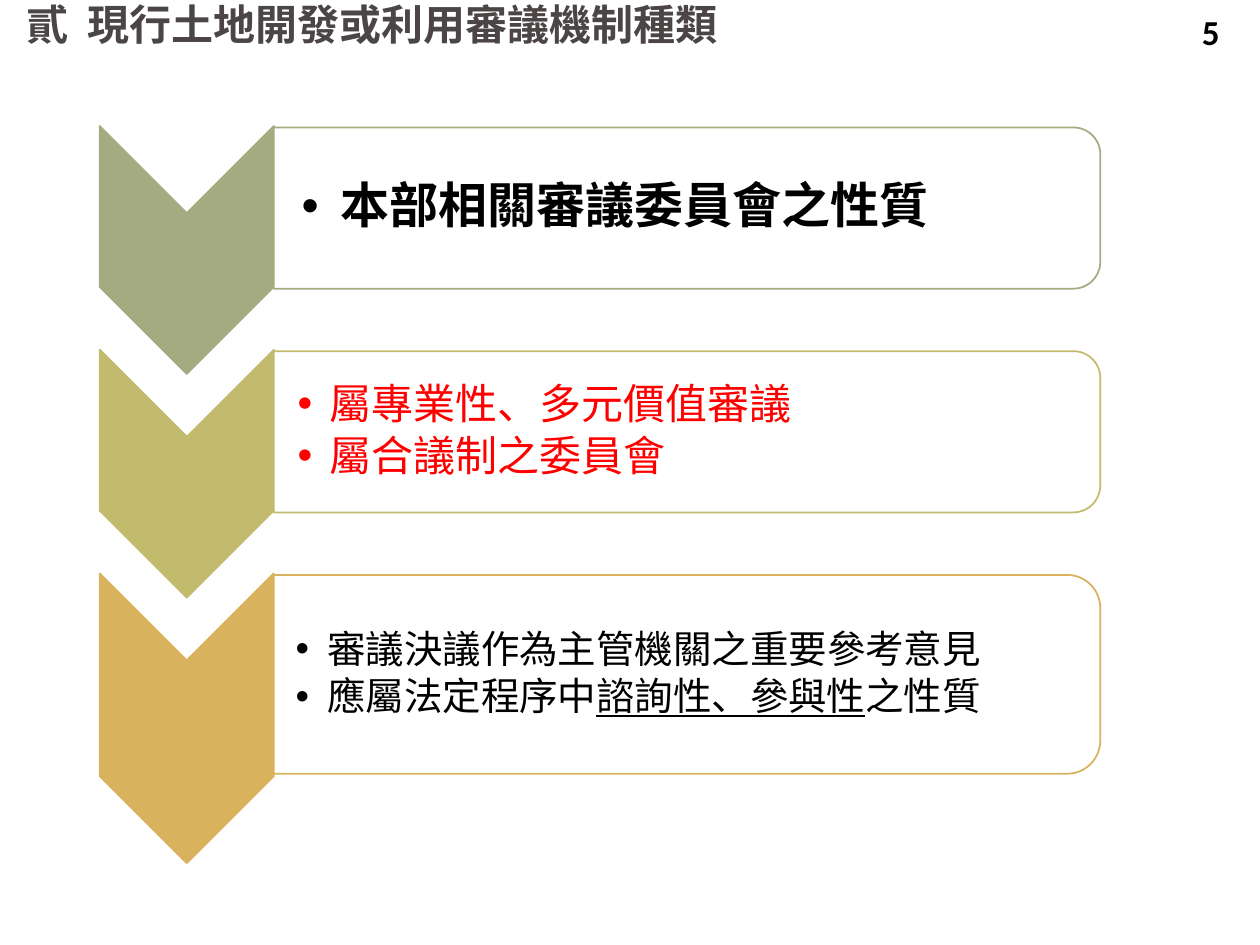
"""Build the slide on the nature of the review committees."""
from dataclasses import dataclass

from lxml import etree
from pptx import Presentation
from pptx import util as u
from pptx.dml import color
from pptx.enum import shapes, text
from pptx.oxml import ns

CJK = "Noto Sans CJK SC"
LEFT, TOP, STEP = 2.01, 2.54, 4.51
BAR, WIDE = 3.51, 16.66
INK = "4C4545"


@dataclass
class Run:
    words: str
    under: bool = False


@dataclass
class Band:
    hue: str
    tall: float
    box: float
    size: int
    ink: str
    hang: float
    rows: list[list[Run]]
    bold: bool = False


BANDS = [
    Band("A5AB81", 5, 3.25, 28, "000000", 0.79,
         [[Run("本部相關審議委員會之性質")]], True),
    Band("C2BB6E", 5, 3.25, 24, "FF0000", 0.64,
         [[Run("屬專業性、多元價值審議")], [Run("屬合議制之委員會")]]),
    Band("D8B25C", 5.84, 4.01, 22, "000000", 0.64,
         [[Run("審議決議作為主管機關之重要參考意見")],
          [Run("應屬法定程序中"), Run("諮詢性、參與性", True), Run("之性質")]]),
]


def rgb(code: str) -> color.RGBColor:
    """Turn a hex string into a colour."""
    return color.RGBColor.from_string(code)


def place(shape, left: float, top: float, width: float, height: float) -> None:
    """Move and size a shape in centimetres."""
    shape.left, shape.top = u.Cm(left), u.Cm(top)
    shape.width, shape.height = u.Cm(width), u.Cm(height)


def frame(shape, inset: float = 0.25, rim: float = 0.13):
    """Set up a middle-anchored text frame and return it."""
    tf = shape.text_frame
    tf.word_wrap = True
    tf.auto_size = text.MSO_AUTO_SIZE.NONE
    tf.vertical_anchor = text.MSO_ANCHOR.MIDDLE
    tf.margin_left = u.Cm(inset)
    tf.margin_right = u.Cm(min(inset, rim))
    tf.margin_top = tf.margin_bottom = u.Cm(rim)
    return tf


def write(para, run: Run, size: int, ink: str, bold: bool, face: str = CJK) -> None:
    """Add one formatted run to a paragraph."""
    part = para.add_run()
    part.text = run.words
    font = part.font
    font.size, font.bold, font.name = u.Pt(size), bold, face
    font.color.rgb = rgb(ink)
    if run.under:
        font.underline = True
    etree.SubElement(part._r.get_or_add_rPr(), ns.qn("a:ea"), typeface=face)


def label(shape, words: str, size: int, ink: str, align, face: str = CJK,
          space: float = 0.9) -> None:
    """Write a bold single line into a shape."""
    para = frame(shape).paragraphs[0]
    para.alignment, para.line_spacing = align, space
    write(para, Run(words), size, ink, True, face)


def turn(slide, kind, left: float, top: float, width: float, height: float,
         fill: str, line: str):
    """Draw a shape turned a quarter so that it covers the given area."""
    shape = slide.shapes.add_shape(kind, 0, 0, 0, 0)
    place(shape, left + (width - height) / 2, top + (height - width) / 2,
          height, width)
    shape.rotation = 90
    shape.shadow.inherit = False
    shape.fill.solid()
    shape.fill.fore_color.rgb = rgb(fill)
    shape.line.color.rgb = rgb(line)
    shape.line.width = u.Pt(1)
    return shape


def fill_list(body, band: Band, top: float) -> None:
    """Put the bullets of a band into a body placeholder above its panel."""
    high = band.box * 0.91
    place(body, LEFT + BAR, top + (band.box - high) / 2, 16.5, high)
    body.element.getparent().append(body.element)
    tf = frame(body, band.size * 0.02, 0.05)
    for i, row in enumerate(band.rows):
        para = tf.add_paragraph() if i else tf.paragraphs[0]
        para.level = 1
        props = para._p.get_or_add_pPr()
        props.set("marL", str(u.Cm(band.hang)))
        props.set("indent", str(-u.Cm(band.hang)))
        etree.SubElement(props, ns.qn("a:buChar"), char="•")
        para.alignment = text.PP_ALIGN.LEFT
        para.line_spacing, para.space_before = 0.9, u.Pt(0)
        para.space_after = u.Pt(round(band.size * 0.15, 1))
        for run in row:
            write(para, run, band.size, band.ink, band.bold)


def draw(slide, band: Band, body, top: float) -> None:
    """Draw the chevron, panel and list of one band."""
    kind = shapes.MSO_SHAPE
    turn(slide, kind.CHEVRON, LEFT, top, BAR, band.tall, band.hue, band.hue)
    panel = turn(slide, kind.ROUND_2_SAME_RECTANGLE, LEFT + BAR, top + 0.03,
                 WIDE, band.box, "FFFFFF", band.hue)
    tone = panel.fill._xPr.find(".//" + ns.qn("a:srgbClr"))
    etree.SubElement(tone, ns.qn("a:alpha"), val="90000")
    fill_list(body, band, top + 0.03)


def main() -> None:
    """Build and save the slide."""
    deck = Presentation()
    deck.slide_width, deck.slide_height = u.Cm(25.4), u.Cm(19.05)
    slide = deck.slides.add_slide(deck.slide_layouts[4])
    title, *bodies, spare = slide.placeholders
    spare.element.getparent().remove(spare.element)
    align = text.PP_ALIGN
    place(title, 1.52, -0.03, 21.18, 1.14)
    label(title, "現行土地開發或利用審議機制種類", 24, INK, align.LEFT)
    part = slide.shapes.add_textbox(0, 0, 0, 0)
    place(part, 0.28, -0.03, 1.24, 1.14)
    label(part, "貳", 24, INK, align.LEFT)
    for i, (band, body) in enumerate(zip(BANDS, bodies)):
        draw(slide, band, body, TOP + i * STEP)
    page = slide.shapes.add_textbox(0, 0, 0, 0)
    place(page, 23.37, 0.2, 1.96, 0.86)
    label(page, "5", 20, "000000", align.CENTER, "Calibri", 1.0)
    deck.save("out.pptx")


if __name__ == "__main__":
    main()
